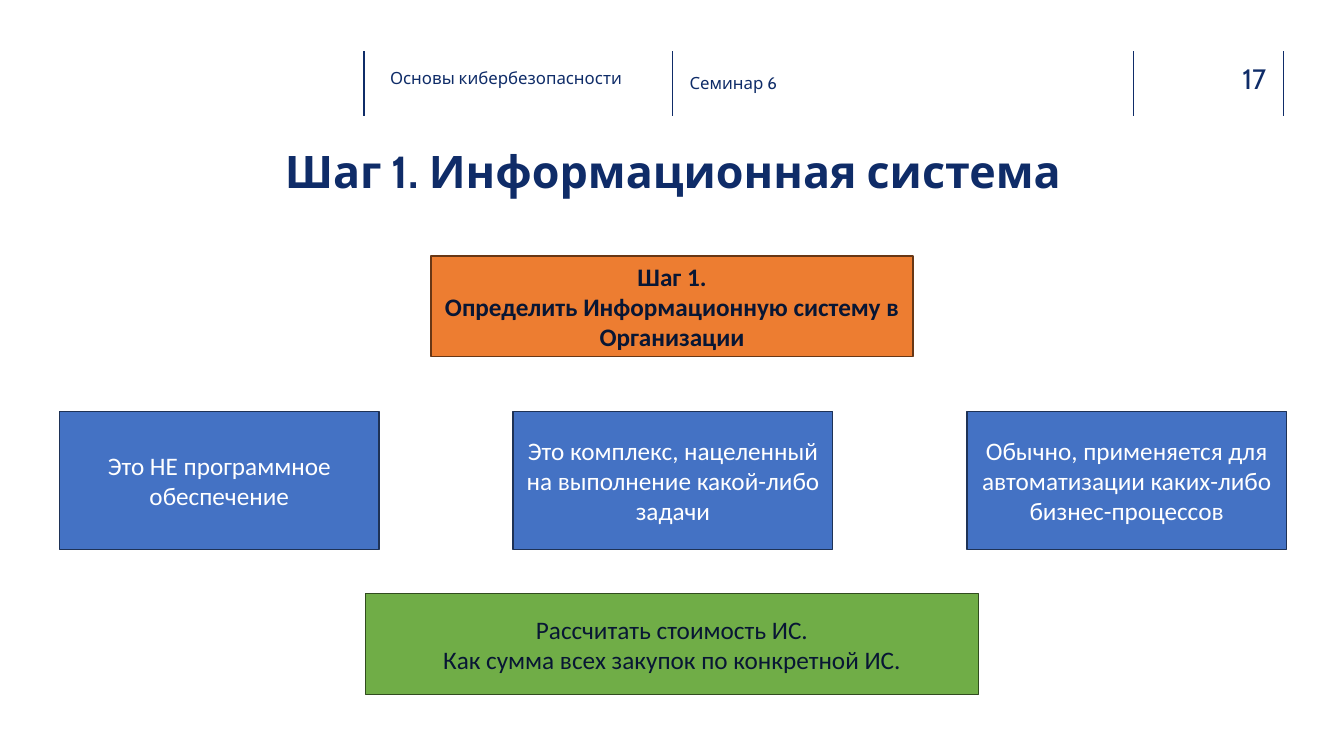
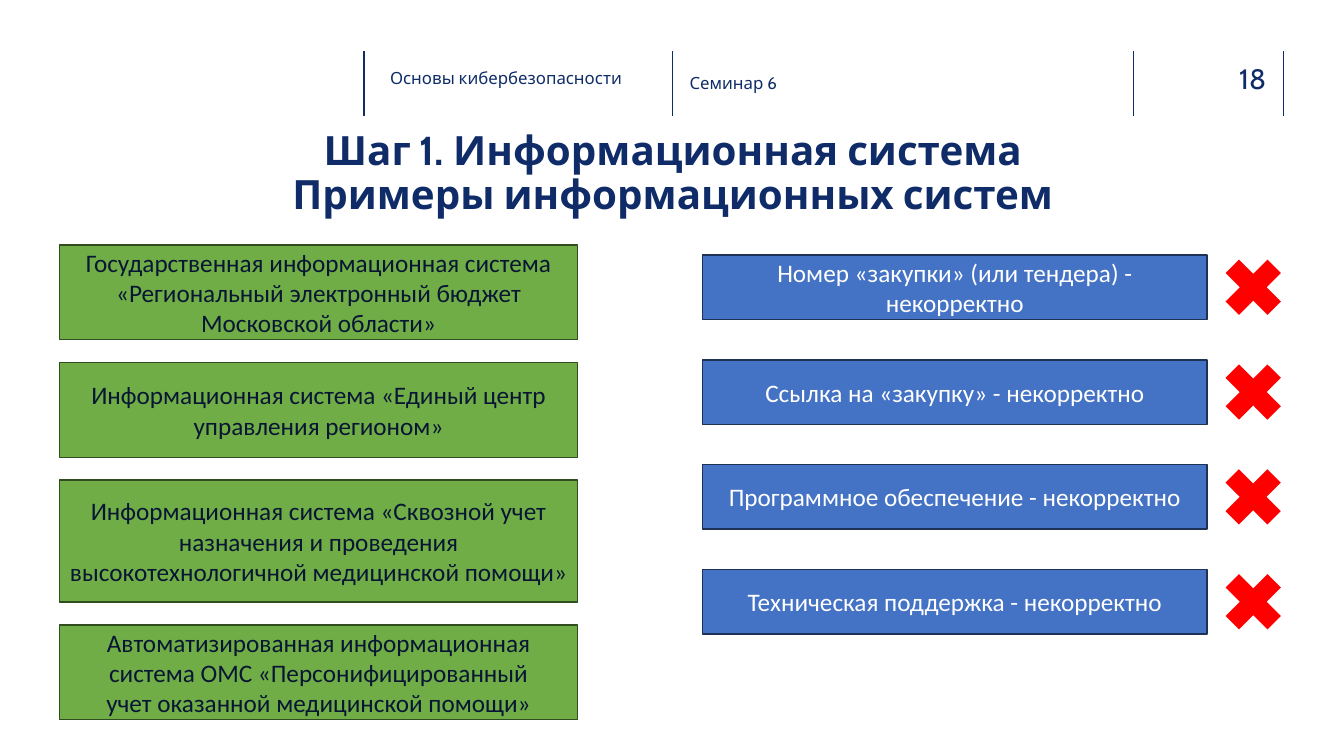
from lxml import etree
from pptx import Presentation
from pptx.dml.color import RGBColor
from pptx.enum.shapes import MSO_CONNECTOR, MSO_SHAPE
from pptx.enum.text import MSO_ANCHOR, MSO_AUTO_SIZE, PP_ALIGN
from pptx.oxml.ns import qn
from pptx.util import Inches, Pt

LEFT, CENTER, RIGHT = PP_ALIGN.LEFT, PP_ALIGN.CENTER, PP_ALIGN.RIGHT
TOP, MIDDLE = MSO_ANCHOR.TOP, MSO_ANCHOR.MIDDLE
RECTANGLE, CROSS = MSO_SHAPE.RECTANGLE, MSO_SHAPE.MATH_MULTIPLY

COLORS = {"navy": "0F2C68", "ink": "081634", "white": "FFFFFF", "red": "FF0000"}
BOX_STYLES = {
    "orange": {"fill": "ED7D31", "line": "683715", "color": COLORS["ink"]},
    "blue": {"fill": "4472C4", "line": "1E3256", "color": COLORS["white"]},
    "green": {"fill": "70AD47", "line": "314C1F", "color": COLORS["ink"]},
}
HEADING_FONT, BODY_FONT = "Cabin", "Calibri"

WIDTH, HEIGHT = 13.33, 7.5
MARGIN, CONTENT_WIDTH = 0.59, 12.17
HEADER_RULES = [3.61, 6.67, 11.24, 12.73]
RULE_TOP, RULE_BOTTOM = 0.51, 1.15

COURSE, SEMINAR = "Основы кибербезопасности", "Семинар 6"
STEP_TITLE = "Шаг 1. Информационная система"
STEP = "Шаг 1.\nОпределить Информационную систему в Организации"
FEATURES = [
    "Это НЕ программное обеспечение",
    "Это комплекс, нацеленный на выполнение какой-либо задачи",
    "Обычно, применяется для автоматизации каких-либо бизнес-процессов",
]
COST = "Рассчитать стоимость ИС.\nКак сумма всех закупок по конкретной ИС."

EXAMPLES_TITLE = "Шаг 1. Информационная система\nПримеры информационных систем"
EXAMPLES = [
    ("Государственная информационная система «Региональный электронный бюджет Московской области»", 0.94),
    ("Информационная система «Единый центр управления регионом»", 0.94),
    ("Информационная система «Сквозной учет назначения и проведения высокотехнологичной медицинской помощи»", 1.21),
    ("Автоматизированная информационная система ОМС «Персонифицированный\nучет оказанной медицинской помощи»", 0.94),
]
MISTAKES = [
    "Номер «закупки» (или тендера) - некорректно",
    "Ссылка на «закупку» - некорректно",
    "Программное обеспечение - некорректно",
    "Техническая поддержка - некорректно",
]


def inches(*lengths):
    return [Inches(length) for length in lengths]


def write(frame, text, size=18, font=BODY_FONT, color=COLORS["navy"], bold=False,
          align=CENTER, anchor=MIDDLE, inset=True, spacing=1.0):
    frame.word_wrap = True
    frame.auto_size = MSO_AUTO_SIZE.NONE
    frame.vertical_anchor = anchor
    side, edge = inches(0.1, 0.05) if inset else (0, 0)
    frame.margin_left = frame.margin_right = side
    frame.margin_top = frame.margin_bottom = edge
    for index, line in enumerate(text.split("\n")):
        para = frame.add_paragraph() if index else frame.paragraphs[0]
        para.alignment = align
        para.line_spacing = spacing
        span = para.add_run()
        span.text = line
        span.font.name = font
        span.font.size = Pt(size)
        span.font.bold = bold
        span.font.color.rgb = RGBColor.from_string(color)


def add_label(page, text, area, **style):
    label = page.shapes.add_textbox(*inches(*area))
    write(label.text_frame, text, font=HEADING_FONT, **style)


def add_rule(page, x):
    rule = page.shapes.add_connector(
        MSO_CONNECTOR.STRAIGHT, *inches(x, RULE_TOP, x, RULE_BOTTOM))
    rule.line.color.rgb = RGBColor.from_string(COLORS["navy"])
    rule.line.width = Pt(1)
    etree.SubElement(rule._element.spPr, qn("a:effectLst"))


def add_figure(page, kind, area, fill):
    figure = page.shapes.add_shape(kind, *inches(*area))
    figure.shadow.inherit = False
    figure.fill.solid()
    figure.fill.fore_color.rgb = RGBColor.from_string(fill)
    figure.line.fill.background()
    return figure


def add_box(page, text, area, style, bold=False):
    look = BOX_STYLES[style]
    box = add_figure(page, RECTANGLE, area, look["fill"])
    box.line.color.rgb = RGBColor.from_string(look["line"])
    box.line.width = Pt(1)
    write(box.text_frame, text, color=look["color"], bold=bold)


def add_page(deck, number, title, title_size):
    page = deck.slides.add_slide(deck.slide_layouts[5])
    for x in HEADER_RULES:
        add_rule(page, x)
    add_label(page, COURSE, (3.77, 0.62, 2.66, 0.3), size=12, align=LEFT, anchor=TOP)
    add_label(page, SEMINAR, (6.84, 0.52, 3.96, 0.61), size=12, align=LEFT, inset=False)
    add_label(page, str(number), (11.83, 0.61, 0.73, 0.34), size=20, align=RIGHT,
              anchor=TOP, inset=False)
    heading = page.shapes.title
    heading.left, heading.top, heading.width, heading.height = inches(
        MARGIN, 1.41, CONTENT_WIDTH, 0.64)
    write(heading.text_frame, title, size=title_size, font=HEADING_FONT, bold=True,
          spacing=0.9)
    return page


def add_step_page(deck):
    page = add_page(deck, 17, STEP_TITLE, 32)
    for text, top, width, style in [(STEP, 2.54, 4.78, "orange"),
                                    (COST, 5.89, 6.08, "green")]:
        area = ((WIDTH - width) / 2, top, width, 1)
        add_box(page, text, area, style, bold=style == "orange")
    width = 3.17
    pitch = (CONTENT_WIDTH - width) / (len(FEATURES) - 1)
    for column, text in enumerate(FEATURES):
        add_box(page, text, (MARGIN + column * pitch, 4.08, width, 1.37), "blue")


def add_examples_page(deck):
    page = add_page(deck, 18, EXAMPLES_TITLE, 28.8)
    top, bottom = 2.43, 7.14
    gap = (bottom - top - sum(height for _, height in EXAMPLES)) / (len(EXAMPLES) - 1)
    for text, height in EXAMPLES:
        add_box(page, text, (MARGIN, top, 5.14, height), "green")
        top += height + gap
    height, cross = 0.64, 0.8
    for row, text in enumerate(MISTAKES):
        top = 2.53 + row * 1.04
        add_box(page, text, (6.97, top, 5, height), "blue")
        add_figure(page, CROSS, (12.03, top + (height - cross) / 2, cross, cross),
                   COLORS["red"])


def main():
    deck = Presentation()
    deck.slide_width, deck.slide_height = inches(WIDTH, HEIGHT)
    add_step_page(deck)
    add_examples_page(deck)
    deck.save("out.pptx")


if __name__ == "__main__":
    main()
